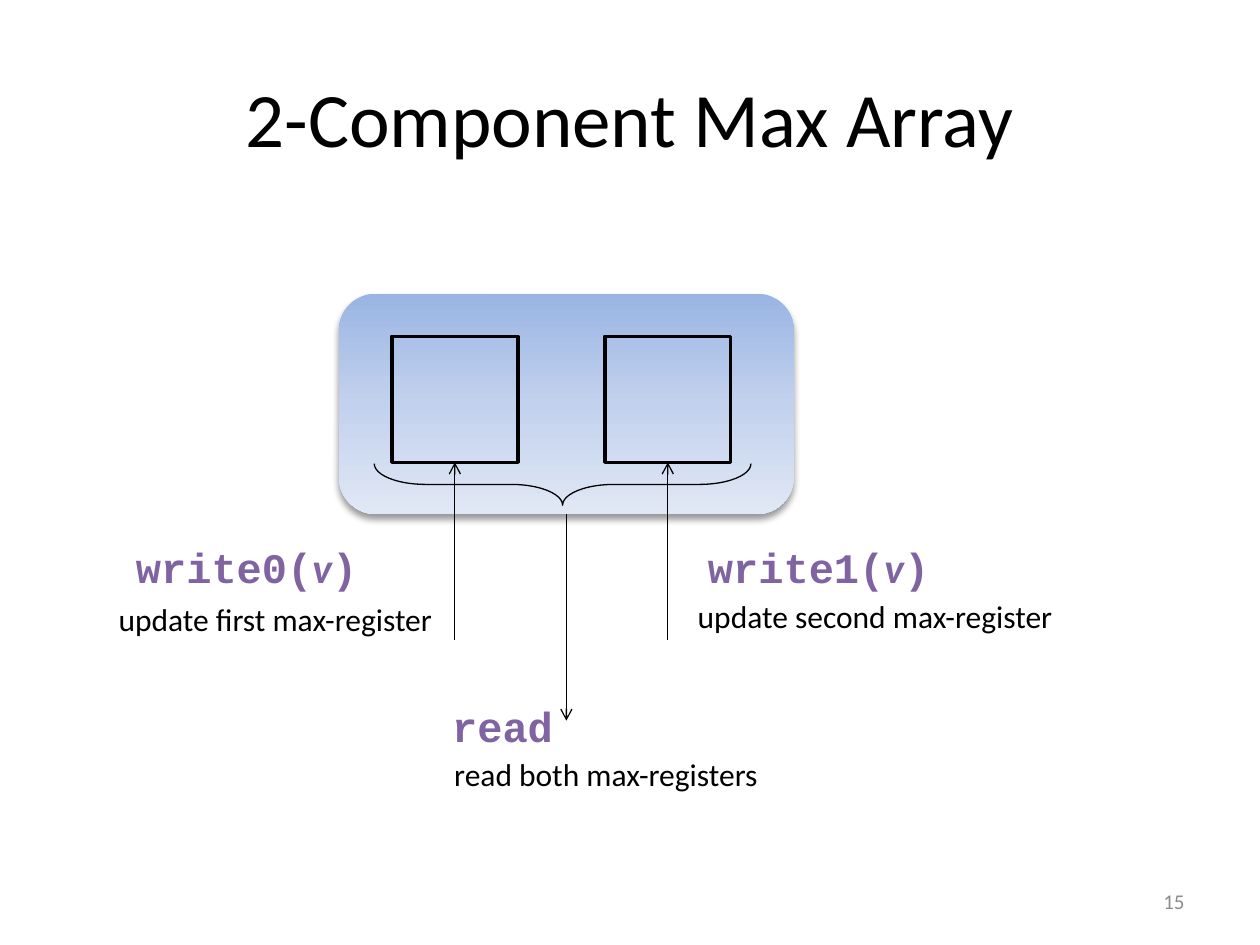
from copy import deepcopy
from lxml.etree import SubElement as Sub
from pptx import Presentation
from pptx.dml.color import RGBColor as RGB
from pptx.enum.shapes import MSO_CONNECTOR as Link, MSO_SHAPE as Kind
from pptx.enum.text import MSO_ANCHOR as Anchor, PP_ALIGN as Align
from pptx.oxml.ns import qn
from pptx.util import Inches, Pt

BLACK = RGB(0x00, 0x00, 0x00)
GREY = RGB(0x8C, 0x8C, 0x8C)
PURPLE = RGB(0x80, 0x64, 0xA2)
BLUES = RGB(0x9A, 0xB5, 0xE4), RGB(0xC2, 0xD1, 0xED), RGB(0xE1, 0xE8, 0xF5)
SANS, MONO = "Calibri", "Courier New"
COLS, ROWS = 100, 75


class Board:
    """Draws on one slide, with lengths in cells of a 100 by 75 grid."""

    def __init__(self):
        self.deck = Presentation()
        self.deck.slide_width, self.deck.slide_height = Inches(10), Inches(7.5)
        self.slide = self.deck.slides.add_slide(self.deck.slide_layouts[5])
        self.shapes = self.slide.shapes

    def cells(self, x, y, *size):
        wide, high = self.deck.slide_width / COLS, self.deck.slide_height / ROWS
        return [round(n * (high if i % 2 else wide)) for i, n in enumerate((x, y, *size))]

    def style(self, para, size, color, face=SANS, bold=None):
        font = para.font
        font.size, font.name, font.bold = Pt(size), face, bold
        font.color.rgb = color

    def title(self, text, box):
        head = self.shapes.title
        head.left, head.top, head.width, head.height = self.cells(*box)
        head.text_frame.vertical_anchor = Anchor.MIDDLE
        para = head.text_frame.paragraphs[0]
        para.text, para.alignment = text, Align.CENTER
        self.style(para, 44, BLACK)

    def frame(self, box, anchor, align):
        frame = self.shapes.add_textbox(*self.cells(*box)).text_frame
        frame.word_wrap, frame.vertical_anchor = True, anchor
        para = frame.paragraphs[0]
        para.alignment = align
        return para

    def note(self, text, box, size=18, color=BLACK, align=Align.CENTER):
        para = self.frame(box, Anchor.MIDDLE, align)
        para.text = text
        self.style(para, size, color)

    def code(self, name, box, arg=None):
        para = self.frame(box, Anchor.TOP, Align.LEFT)
        self.style(para, 24, PURPLE, MONO, True)
        if not arg:
            para.text = name
            return
        for text in (name + "(", arg, ")"):
            run = para.add_run()
            run.text = text
            if text == arg:
                run.font.name, run.font.italic = SANS, True

    def shape(self, kind, box, line=None):
        item = self.shapes.add_shape(kind, *self.cells(*box))
        item.shadow.inherit = False
        item.fill.background()
        if line:
            item.line.color.rgb, item.line.width = BLACK, Pt(line)
        else:
            item.line.fill.background()
        return item

    def panel(self, box):
        item = self.shape(Kind.ROUNDED_RECTANGLE, box)
        item.fill.gradient()
        item.fill.gradient_angle = 270
        stops = item._element.spPr.find(".//" + qn("a:gsLst"))
        stops.insert(1, deepcopy(stops[0]))
        for i, stop in enumerate(item.fill.gradient_stops):
            stop.color.rgb, stop.position = BLUES[i], i / 2
        glow = Sub(item._element.spPr.find(qn("a:effectLst")), qn("a:outerShdw"),
                   blurRad=str(Pt(4)), dist=str(Pt(3)), dir="5400000", rotWithShape="0")
        tint = Sub(glow, qn("a:srgbClr"), val=str(BLACK))
        Sub(tint, qn("a:alpha"), val="40000")
        return item

    def brace(self, box):
        item = self.shape(Kind.RIGHT_BRACE, box, 0.75)
        item.rotation = 90
        item.adjustments[0], item.adjustments[1] = 1.24, 0.5

    def arrow(self, start, end, source=None, target=None):
        line = self.shapes.add_connector(Link.STRAIGHT, *self.cells(*start, *end))
        if source:
            line.begin_connect(source, 2)
        if target:
            line.end_connect(target, 2)
        line.line.color.rgb, line.line.width = BLACK, Pt(0.75)
        Sub(line.line._get_or_add_ln(), qn("a:tailEnd"), type="arrow")
        Sub(line._element.spPr, qn("a:effectLst"))


def main():
    board = Board()
    board.title("2-Component Max Array", (5, 3, 90, 12.5))
    panel = board.panel((26.9, 23.3, 36.1, 17.5))
    for left in (31.1, 48):
        cell = board.shape(Kind.RECTANGLE, (left, 26.7, 10, 10), 2)
        mid = left + 5
        board.arrow((mid, 50.8), (mid, 36.7), target=cell)
    board.brace((43, 23.5, 3.3, 29.9))
    board.arrow((44.95, 40.8), (44.95, 57.2), source=panel)
    board.code("write0", (9.8, 42.5, 25.8, 5), "v")
    board.code("write1", (55.2, 42.5, 25.8, 5), "v")
    board.code("read", (34.9, 55.1, 20, 5))
    board.note("update first max-register", (8.1, 44.5, 27.5, 9.2))
    board.note("update second max-register", (53.5, 44.3, 31.9, 9.2))
    board.note("read both max-registers", (34.9, 56.8, 26.4, 9.2))
    board.note("15", (71.7, 69.5, 23.3, 4), 12, GREY, Align.RIGHT)
    board.deck.save("out.pptx")


if __name__ == "__main__":
    main()
